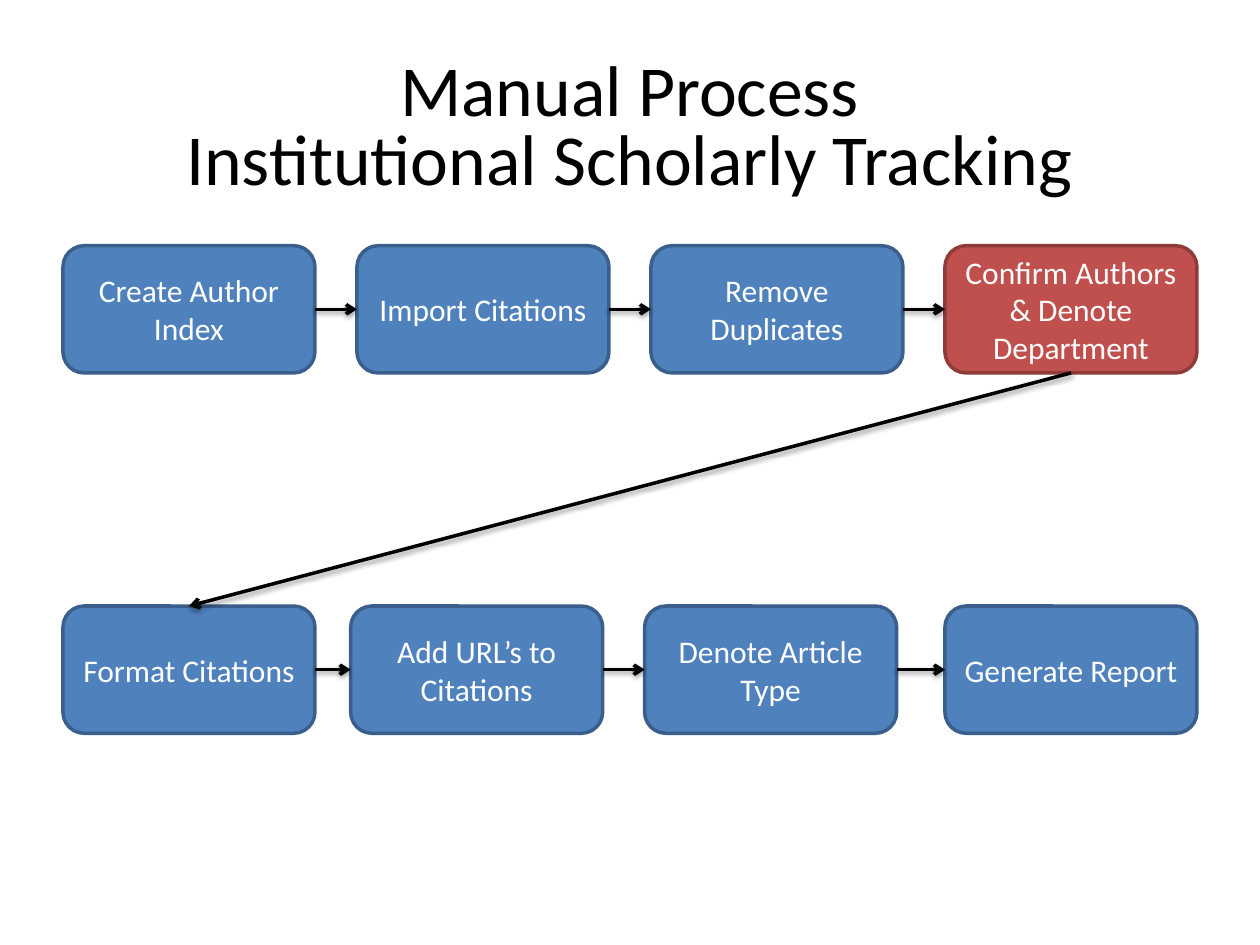
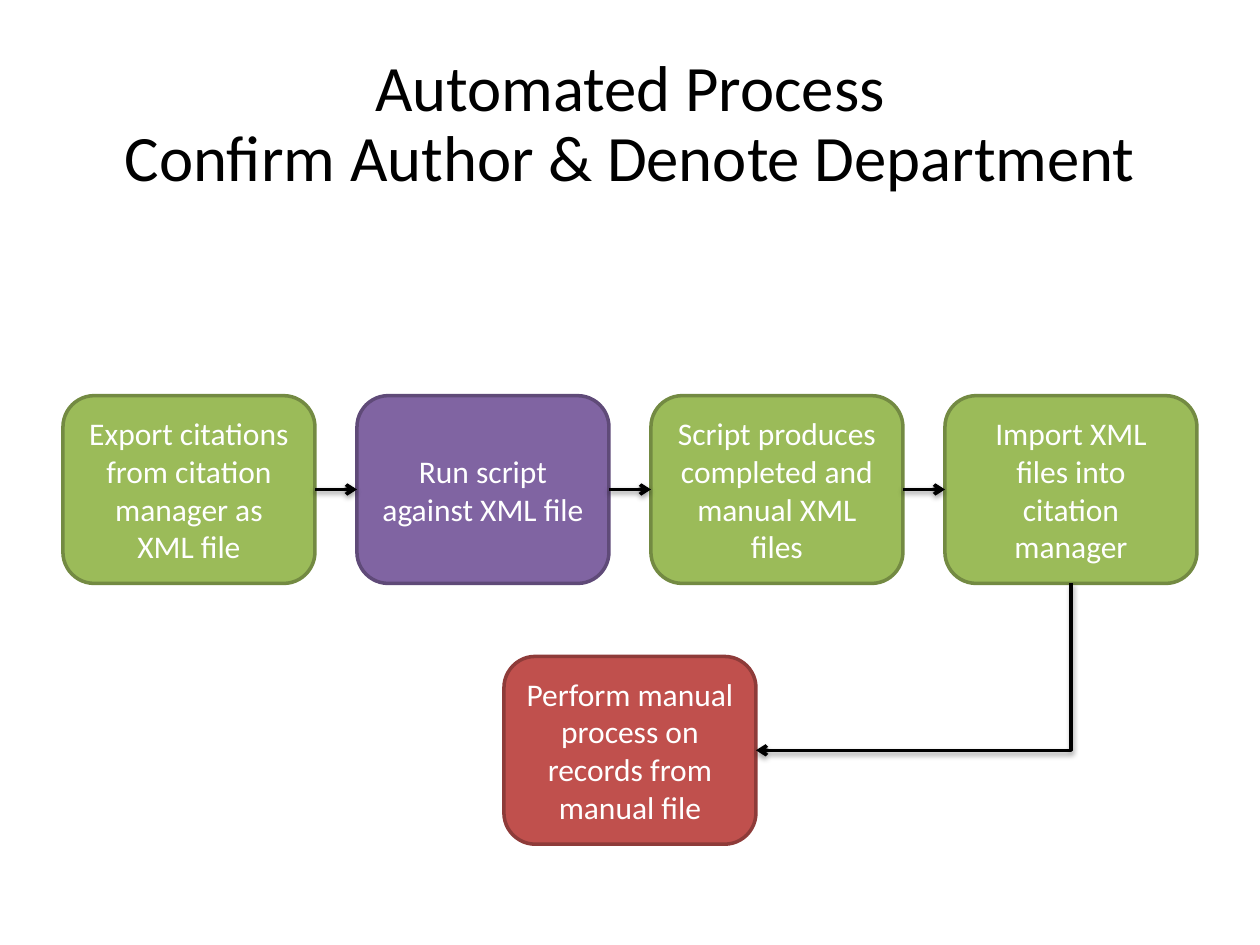
from dataclasses import dataclass
from itertools import pairwise

from lxml.etree import SubElement
from pptx import Presentation
from pptx.dml.color import RGBColor
from pptx.enum.shapes import MSO_CONNECTOR, MSO_SHAPE
from pptx.enum.text import MSO_ANCHOR, MSO_AUTO_SIZE, PP_ALIGN
from pptx.oxml.ns import qn
from pptx.util import Inches, Pt

# Content: each step is (text, colour role)
MANUAL_TITLE = "Manual Process\vInstitutional Scholarly Tracking"
MANUAL_FIRST = [
    ("Create Author Index", "manual"),
    ("Import Citations", "manual"),
    ("Remove Duplicates", "manual"),
    ("Confirm Authors & Denote Department", "focus"),
]
MANUAL_SECOND = [
    ("Format Citations", "manual"),
    ("Add URL’s to Citations", "manual"),
    ("Denote Article Type", "manual"),
    ("Generate Report", "manual"),
]
AUTOMATED_TITLE = "Automated Process\vConfirm Author & Denote Department"
AUTOMATED_STEPS = [
    ("Export citations from citation manager as XML file", "automated"),
    ("Run script against XML file", "script"),
    ("Script produces completed and manual XML files", "automated"),
    ("Import XML files into citation manager", "automated"),
]
FALLBACK_STEP = ("Perform manual process on records from manual file", "focus")


@dataclass(frozen=True)
class Theme:
    font: str = "Calibri"
    title_size: int = 44
    title_scale: int = 90  # percent, shrinks the title to its frame
    step_size: int = 18
    line_width: int = 2
    ink: str = "000000"
    step_ink: str = "FFFFFF"


THEME = Theme()
STEP_COLOURS = {  # role: (fill, outline)
    "manual": ("4F81BD", "3A5F8C"),
    "focus": ("C0504D", "8E3B39"),
    "automated": ("9BBB59", "738A42"),
    "script": ("8064A2", "5F4A78"),
}

# Layout, in inches
SLIDE_WIDTH, SLIDE_HEIGHT, MARGIN = 10, 7.5, 0.5
STEP_WIDTH, SHORT_STEP, TALL_STEP = 2, 1.01, 1.49
COLUMN_PITCH = (SLIDE_WIDTH - 2 * MARGIN - STEP_WIDTH) / 3
COLUMNS = [MARGIN + column * COLUMN_PITCH for column in range(4)]
SECOND_COLUMNS = [COLUMNS[0], COLUMNS[1] - 0.05, COLUMNS[2] - 0.05, COLUMNS[3]]
TOP, LEFT, BOTTOM, RIGHT = range(4)  # connection sites of a step


def write(frame, text, *, size, colour):
    """Fill a text frame with centred text."""
    frame.text = text
    frame.word_wrap = True
    frame.vertical_anchor = MSO_ANCHOR.MIDDLE
    for paragraph in frame.paragraphs:
        paragraph.alignment = PP_ALIGN.CENTER
        for run in paragraph.runs:
            run.font.name = THEME.font
            run.font.size = Pt(size)
            run.font.color.rgb = RGBColor.from_string(colour)


def add_titled_slide(deck, heading):
    slide = deck.slides.add_slide(deck.slide_layouts[5])
    title = slide.shapes.title
    title.left, title.top = Inches(MARGIN), Inches(0.3)
    title.width, title.height = Inches(SLIDE_WIDTH - 2 * MARGIN), Inches(1.25)
    frame = title.text_frame
    write(frame, heading, size=THEME.title_size, colour=THEME.ink)
    frame.auto_size = MSO_AUTO_SIZE.TEXT_TO_FIT_SHAPE
    fit = title._element.txBody.bodyPr.find(qn("a:normAutofit"))
    fit.set("fontScale", str(THEME.title_scale * 1000))
    return slide


def add_step(slide, step, left, top, height):
    text, role = step
    fill, outline = STEP_COLOURS[role]
    box = slide.shapes.add_shape(
        MSO_SHAPE.ROUNDED_RECTANGLE,
        Inches(left), Inches(top), Inches(STEP_WIDTH), Inches(height))
    box.shadow.inherit = False
    box.fill.solid()
    box.fill.fore_color.rgb = RGBColor.from_string(fill)
    box.line.color.rgb = RGBColor.from_string(outline)
    box.line.width = Pt(THEME.line_width)
    write(box.text_frame, text, size=THEME.step_size, colour=THEME.step_ink)
    return box


def add_arrow(slide, start, start_site, end, end_site, kind=MSO_CONNECTOR.STRAIGHT):
    arrow = slide.shapes.add_connector(kind, 0, 0, 0, 0)
    arrow.begin_connect(start, start_site)
    arrow.end_connect(end, end_site)
    arrow.line.color.rgb = RGBColor.from_string(THEME.ink)
    arrow.line.width = Pt(THEME.line_width)
    properties = arrow._element.spPr
    SubElement(properties.find(qn("a:ln")), qn("a:tailEnd"), type="arrow")
    # Soft shadow straight below the line
    effects = SubElement(properties, qn("a:effectLst"))
    shadow = SubElement(
        effects, qn("a:outerShdw"), blurRad=str(Pt(3.1)), dist=str(Pt(1.6)),
        dir="5400000", rotWithShape="0")
    shade = SubElement(shadow, qn("a:srgbClr"), val=THEME.ink)
    SubElement(shade, qn("a:alpha"), val="38000")
    return arrow


def add_down_left_arrow(slide, start, end):
    """One-bend arrow: a quarter turn makes it leave downwards."""
    arrow = add_arrow(slide, start, BOTTOM, end, RIGHT, MSO_CONNECTOR.ELBOW)
    across, down = arrow.width, arrow.height
    middle_x, middle_y = arrow.left + across // 2, arrow.top + down // 2
    arrow.left, arrow.top = middle_x - down // 2, middle_y - across // 2
    arrow.width, arrow.height = down, across
    properties = arrow._element.spPr
    frame = properties.find(qn("a:xfrm"))
    frame.set("flipH", "0")
    frame.set("rot", "5400000")
    properties.find(qn("a:prstGeom")).set("prst", "bentConnector2")


def add_row(slide, steps, lefts, top, height):
    boxes = [add_step(slide, step, left, top, height)
             for step, left in zip(steps, lefts)]
    for before, after in pairwise(boxes):
        add_arrow(slide, before, RIGHT, after, LEFT)
    return boxes


def main():
    deck = Presentation()
    deck.slide_width, deck.slide_height = Inches(SLIDE_WIDTH), Inches(SLIDE_HEIGHT)

    # Manual process: two rows joined by a diagonal
    manual = add_titled_slide(deck, MANUAL_TITLE)
    first = add_row(manual, MANUAL_FIRST, COLUMNS, 1.95, SHORT_STEP)
    second = add_row(manual, MANUAL_SECOND, SECOND_COLUMNS, 4.81, SHORT_STEP)
    add_arrow(manual, first[-1], BOTTOM, second[0], TOP)

    # Automated process: one row, then the manual fallback
    automated = add_titled_slide(deck, AUTOMATED_TITLE)
    row = add_row(automated, AUTOMATED_STEPS, COLUMNS, 3.14, TALL_STEP)
    fallback = add_step(
        automated, FALLBACK_STEP, (SLIDE_WIDTH - STEP_WIDTH) / 2, 5.21, TALL_STEP)
    add_down_left_arrow(automated, row[-1], fallback)

    deck.save("out.pptx")


if __name__ == "__main__":
    main()
